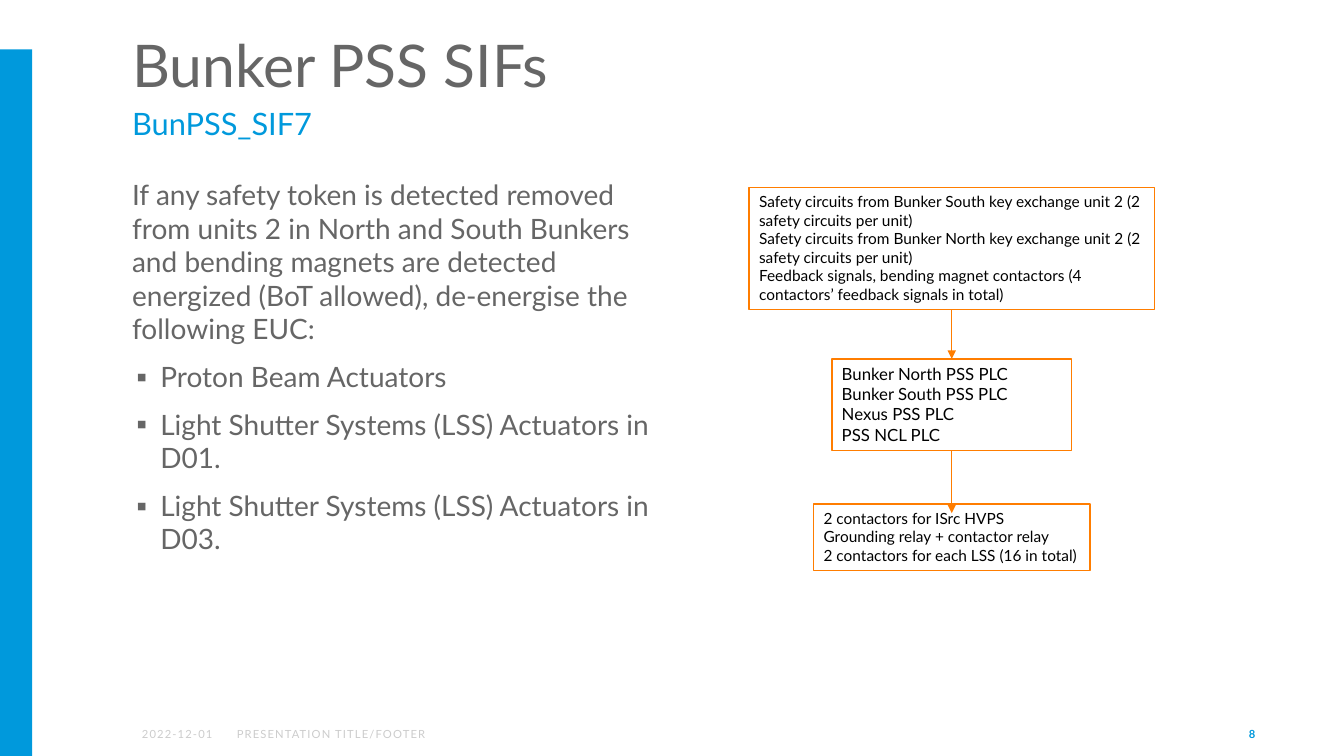
"""Build the Bunker PSS SIF7 slide with its signal flow diagram."""
from lxml import etree
from pptx import Presentation
from pptx.dml.color import RGBColor
from pptx.enum.shapes import MSO_CONNECTOR, MSO_SHAPE
from pptx.enum.text import MSO_ANCHOR, MSO_AUTO_SIZE, PP_ALIGN
from pptx.oxml.ns import qn
from pptx.util import Inches, Pt

RECTANGLE = MSO_SHAPE.RECTANGLE
STRAIGHT = MSO_CONNECTOR.STRAIGHT
TOP, MIDDLE, BOTTOM = MSO_ANCHOR.TOP, MSO_ANCHOR.MIDDLE, MSO_ANCHOR.BOTTOM
LEFT, RIGHT = PP_ALIGN.LEFT, PP_ALIGN.RIGHT
NO_FIT, GROW = MSO_AUTO_SIZE.NONE, MSO_AUTO_SIZE.SHAPE_TO_FIT_TEXT

FONT = "Lato"
BLUE = RGBColor(0x00, 0x99, 0xDC)
GREY = RGBColor(0x66, 0x66, 0x66)
PALE = RGBColor(0xCC, 0xCC, 0xCC)
ORANGE = RGBColor(0xFF, 0x7D, 0x00)
WHITE = RGBColor(0xFF, 0xFF, 0xFF)
BLACK = RGBColor(0x00, 0x00, 0x00)

TWO_CONTENT = 3
FLOW_CENTRE = 9.44
INTRO = (
    "If any safety token is detected removed from units 2 in North and South Bunkers "
    "and bending magnets are detected energized (BoT allowed), de-energise the following EUC:"
)
EQUIPMENT = [
    "Proton Beam Actuators",
    "Light Shutter Systems (LSS) Actuators in D01.",
    "Light Shutter Systems (LSS) Actuators in D03.",
]
FLOW = [
    (1.86, 4.02, 1.21, 11, [
        "Safety circuits from Bunker South key exchange unit 2 (2 safety circuits per unit)",
        "Safety circuits from Bunker North key exchange unit 2 (2 safety circuits per unit)",
        "Feedback signals, bending magnet contactors (4 contactors’ feedback signals in total)",
    ]),
    (3.56, 2.38, 0.91, 12, [
        "Bunker North PSS PLC",
        "Bunker South PSS PLC",
        "Nexus PSS PLC",
        "PSS NCL PLC",
    ]),
    (5, 2.74, 0.66, 11, [
        "2 contactors for ISrc HVPS",
        "Grounding relay + contactor relay",
        "2 contactors for each LSS (16 in total)",
    ]),
]
ARROWS = [(3.07, 3.56), (4.47, 5.09)]


def set_frame(frame, anchor, insets=(0.1, 0.05, 0.1, 0.05), fit=NO_FIT):
    """Set wrapping, anchor, insets and fit of a text frame."""
    frame.word_wrap = True
    frame.auto_size = fit
    frame.vertical_anchor = anchor
    (frame.margin_left, frame.margin_top,
     frame.margin_right, frame.margin_bottom) = [Inches(inset) for inset in insets]


def set_bullet(para, margin, indent, mark=None):
    """Set the indents of a paragraph and its bullet mark, if any."""
    properties = para._p.get_or_add_pPr()
    properties.set("marL", str(Inches(margin)))
    properties.set("indent", str(Inches(indent)))
    if mark:
        colour = etree.SubElement(properties, qn("a:buClr"))
        etree.SubElement(colour, qn("a:srgbClr"), val=str(GREY))
        etree.SubElement(properties, qn("a:buFont"), typeface=FONT)
        etree.SubElement(properties, qn("a:buChar"), char=mark)
    else:
        etree.SubElement(properties, qn("a:buNone"))


def add_span(para, text, size, colour, bold=False, tracking=0):
    """Add one formatted run to a paragraph."""
    span = para.add_run()
    span.text = text
    span.font.name = FONT
    span.font.size = Pt(size)
    span.font.color.rgb = colour
    span.font.bold = bold
    if tracking:
        span.font._element.set("spc", str(tracking))


def add_paras(frame, texts, size, colour):
    """Fill a frame with one left-aligned paragraph per text."""
    for index, text in enumerate(texts):
        para = frame.add_paragraph() if index else frame.paragraphs[0]
        para.alignment = LEFT
        para.space_before = Pt(0)
        add_span(para, text, size, colour)
    return frame.paragraphs


def place(shape, left, top, width, height):
    """Move and size a shape in inches."""
    shape.left, shape.top = Inches(left), Inches(top)
    shape.width, shape.height = Inches(width), Inches(height)


def fill_headings(title, subtitle):
    """Format the title and subtitle placeholders."""
    place(title, 1.21, 0.29, 10.24, 0.72)
    set_frame(title.text_frame, BOTTOM, (0.1, 0.05, 0.1, 0.02))
    heading, = add_paras(title.text_frame, ["Bunker PSS SIFs"], 42, GREY)
    heading.line_spacing = 0.9
    place(subtitle, 1.21, 1.02, 10.24, 0.55)
    set_frame(subtitle.text_frame, TOP, (0.1, 0.02, 0.1, 0.05))
    line, = add_paras(subtitle.text_frame, ["BunPSS_SIF7"], 22, BLUE)
    set_bullet(line, 0, 0)


def fill_body(body):
    """Write the introduction and the bulleted equipment list."""
    place(body, 1.2, 1.71, 5.46, 5.21)
    set_frame(body.text_frame, TOP, (0, 0.05, 0.02, 0.05))
    intro, *items = add_paras(body.text_frame, [INTRO, *EQUIPMENT], 20, GREY)
    set_bullet(intro, 0.11, 0)
    for item in items:
        item.level = 1
        item.space_before = Pt(10)
        set_bullet(item, 0.39, -0.24, "▪")


def add_bar(page):
    """Add the blue bar at the left edge."""
    bar = page.shapes.add_shape(RECTANGLE, 0, Inches(0.49), Inches(0.32), Inches(7.01))
    bar.shadow.inherit = False
    bar.fill.solid()
    bar.fill.fore_color.rgb = BLUE
    bar.line.fill.background()


def add_footer(page, text, left, width, colour=PALE, align=LEFT, bold=False, tracking=80):
    """Add one small text along the foot of the page."""
    box = page.shapes.add_textbox(Inches(left), Inches(7.08), Inches(width), Inches(0.4))
    set_frame(box.text_frame, MIDDLE)
    para = box.text_frame.paragraphs[0]
    para.alignment = align
    add_span(para, text, 8, colour, bold, tracking)


def add_flow_box(page, top, width, height, size, texts):
    """Add an outlined box centred on the flow axis."""
    box = page.shapes.add_shape(RECTANGLE, Inches(FLOW_CENTRE - width / 2), Inches(top),
                                Inches(width), Inches(height))
    box.shadow.inherit = False
    box.fill.solid()
    box.fill.fore_color.rgb = WHITE
    box.line.color.rgb = ORANGE
    box.line.width = Pt(1)
    set_frame(box.text_frame, TOP, fit=GROW)
    add_paras(box.text_frame, texts, size, BLACK)


def add_arrow(page, start, end):
    """Add a downward arrow on the flow axis."""
    centre = Inches(FLOW_CENTRE)
    arrow = page.shapes.add_connector(STRAIGHT, centre, Inches(start), centre, Inches(end))
    arrow.line.color.rgb = ORANGE
    arrow.line.width = Pt(0.5)
    etree.SubElement(arrow.line._get_or_add_ln(), qn("a:tailEnd"), type="triangle")
    etree.SubElement(arrow._element.spPr, qn("a:effectLst"))


def main():
    """Build and save the deck."""
    deck = Presentation()
    deck.slide_width, deck.slide_height = Inches(13.33), Inches(7.5)
    page = deck.slides.add_slide(deck.slide_layouts[TWO_CONTENT])
    add_bar(page)
    fill_headings(page.shapes.title, page.placeholders[1])
    fill_body(page.placeholders[2])
    add_footer(page, "2022-12-01", 1.31, 0.91)
    add_footer(page, "PRESENTATION TITLE/FOOTER", 2.25, 4.72)
    add_footer(page, "8", 9.55, 3, BLUE, RIGHT, bold=True, tracking=0)
    for step in FLOW:
        add_flow_box(page, *step)
    for start, end in ARROWS:
        add_arrow(page, start, end)
    deck.save("out.pptx")


if __name__ == "__main__":
    main()
